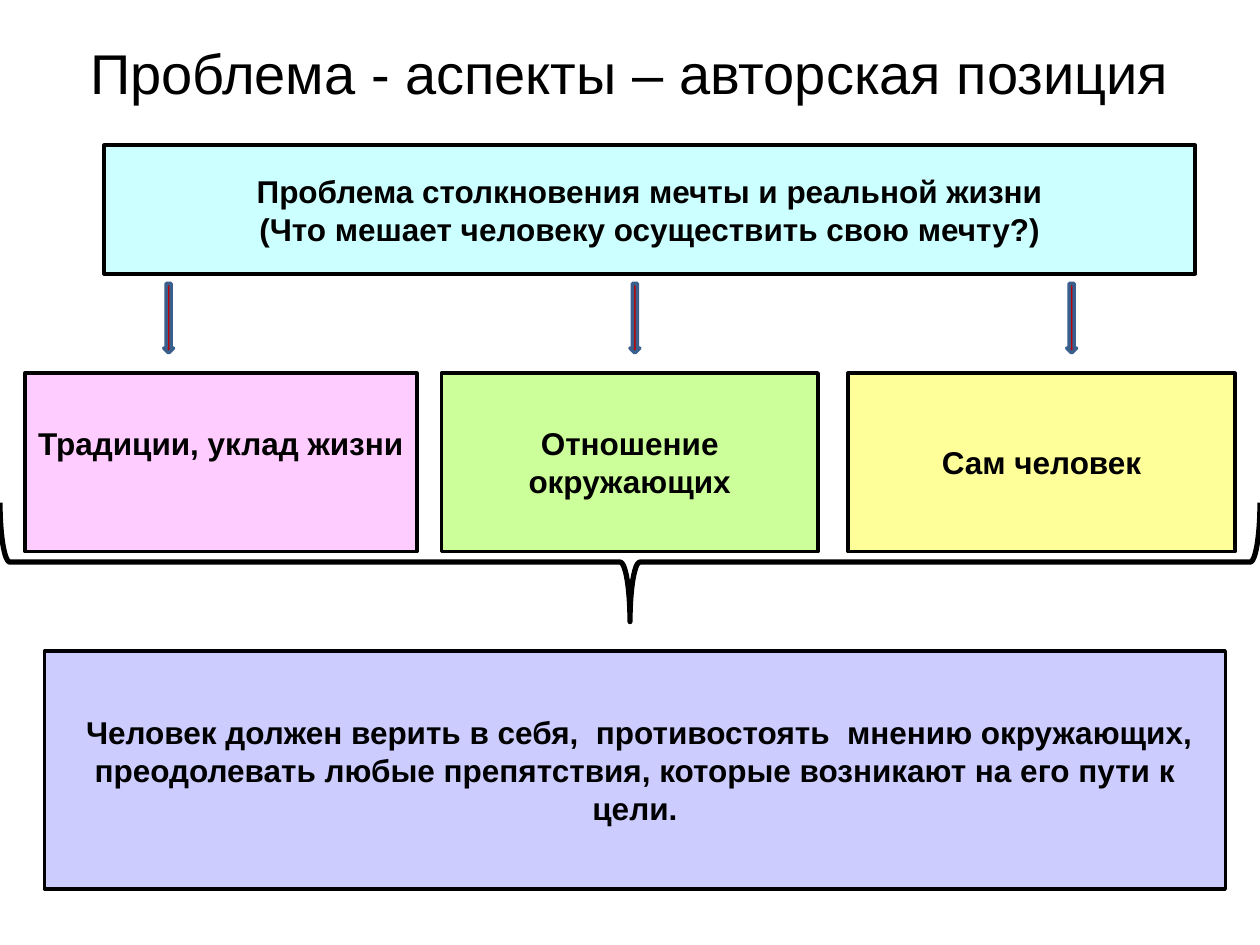
import pptx
import pptx.dml.color
import pptx.enum.shapes
import pptx.enum.text
import pptx.util

Pt = pptx.util.Pt
Shape = pptx.enum.shapes.MSO_SHAPE

COLOURS = {
    "ink": "000000",
    "problem": "CCFFFF",
    "traditions": "FFCCFF",
    "attitude": "CCFF99",
    "person": "FFFF99",
    "position": "CCCCFF",
    "arrow": "C00000",
    "arrow_edge": "3A5F8C",
}


class SlideBuilder:
    """Draw styled elements on the current slide, with lengths in points."""

    font = "Arial"
    heading_size = 32
    body_size = 18
    side_margin = 6

    def __init__(self, slide):
        self.slide = slide

    def colour(self, name):
        return pptx.dml.color.RGBColor.from_string(COLOURS[name])

    def add_text(self, shape, lines, size, bold, bottom=3.6):
        frame = shape.text_frame
        frame.word_wrap = True
        frame.vertical_anchor = pptx.enum.text.MSO_ANCHOR.MIDDLE
        frame.margin_left = frame.margin_right = Pt(self.side_margin)
        frame.margin_bottom = Pt(bottom)
        for index, line in enumerate(lines):
            paragraph = frame.add_paragraph() if index else frame.paragraphs[0]
            paragraph.alignment = pptx.enum.text.PP_ALIGN.CENTER
            run = paragraph.add_run()
            run.text = line
            run.font.name = self.font
            run.font.size = Pt(size)
            run.font.bold = bold
            run.font.color.rgb = self.colour("ink")

    def title(self, text, left, top, width, height):
        box = self.slide.shapes.add_textbox(Pt(left), Pt(top), Pt(width), Pt(height))
        self.add_text(box, [text], self.heading_size, False)

    def outline(self, kind, left, top, width, height, fill=None, edge="ink", weight=2):
        shape = self.slide.shapes.add_shape(kind, Pt(left), Pt(top), Pt(width), Pt(height))
        shape.shadow.inherit = False
        if fill:
            shape.fill.solid()
            shape.fill.fore_color.rgb = self.colour(fill)
        else:
            shape.fill.background()
        shape.line.color.rgb = self.colour(edge)
        shape.line.width = Pt(weight)
        return shape

    def box(self, lines, fill, left, top, width, height, bottom=3.6):
        shape = self.outline(Shape.RECTANGLE, left, top, width, height, fill)
        self.add_text(shape, lines, self.body_size, True, bottom)

    def arrow(self, left, top, width, height):
        self.outline(Shape.DOWN_ARROW, left, top, width, height, "arrow", "arrow_edge")

    def brace_below(self, left, top, width, height):
        brace_left = left + (width - height) / 2
        brace_top = top + (height - width) / 2
        brace = self.outline(Shape.RIGHT_BRACE, brace_left, brace_top, height, width, weight=3)
        brace.rotation = 90


def main():
    presentation = pptx.Presentation()
    presentation.slide_width = Pt(720)
    presentation.slide_height = Pt(540)
    builder = SlideBuilder(presentation.slides.add_slide(presentation.slide_layouts[6]))

    builder.title("Проблема - аспекты – авторская позиция", 36, 21.6, 648, 39)
    builder.box(
        ["Проблема столкновения мечты и реальной жизни",
         "(Что мешает человеку осуществить свою мечту?)"],
        "problem", 59.5, 83, 623.5, 73.5)

    for left in (93.6, 360, 609.6):
        builder.arrow(left, 162, 5.6, 39.7)

    aspects = [
        ("Традиции, уклад жизни", "traditions", 14.2, 224, 25.2),
        ("Отношение окружающих", "attitude", 252.2, 215.3, 3.6),
        ("Сам человек", "person", 484.7, 221, 3.6),
    ]
    for text, fill, left, width, bottom in aspects:
        builder.box([text], fill, left, 213.2, width, 102, bottom)

    builder.brace_below(0, 287.2, 720, 68)
    builder.box(
        [" Человек должен верить в себя,  противостоять  мнению окружающих, "
         "преодолевать любые препятствия, которые возникают на его пути к цели."],
        "position", 25.4, 372, 674.8, 136)

    presentation.save("out.pptx")


if __name__ == "__main__":
    main()
